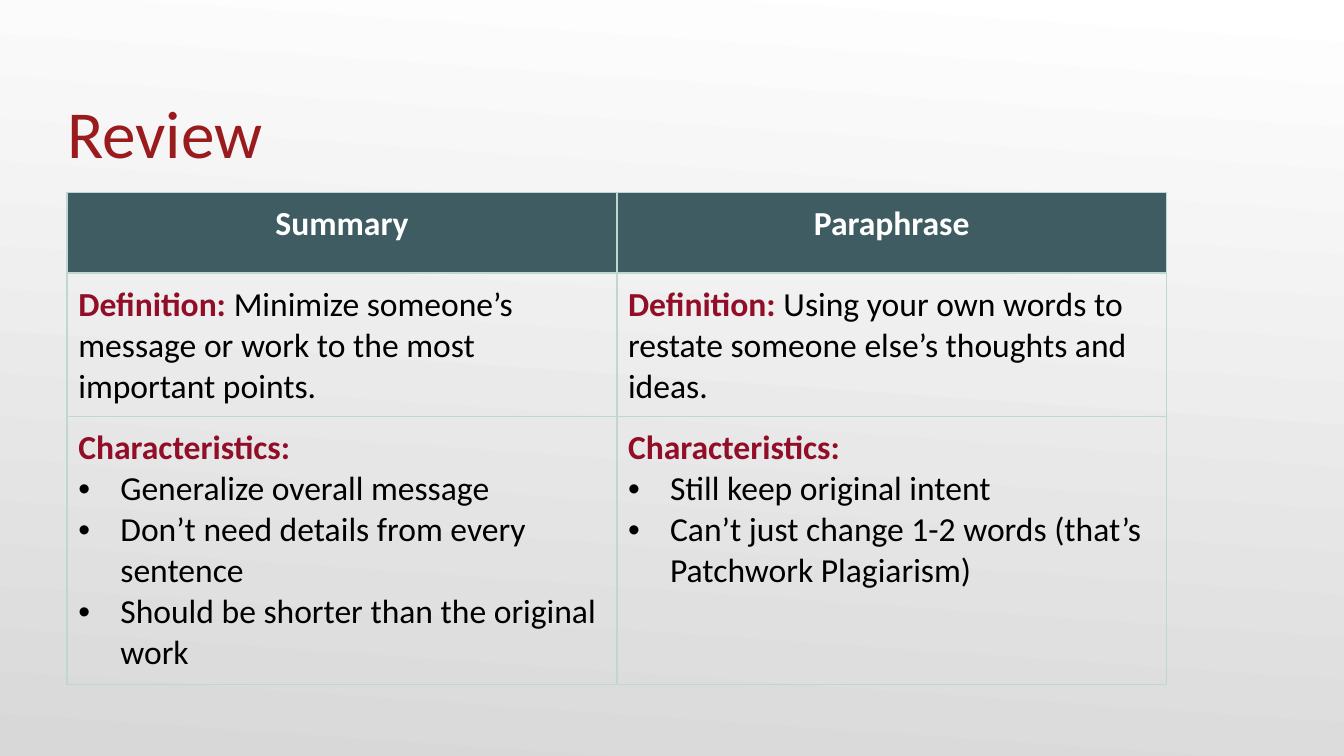
from lxml.etree import SubElement
from pptx import Presentation
from pptx.dml.color import RGBColor
from pptx.enum.text import MSO_ANCHOR, PP_ALIGN
from pptx.oxml import parse_xml
from pptx.oxml.ns import nsdecls, qn
from pptx.util import Pt

COLORS = {
    "top": "FFFFFF",
    "bottom": "D8D8D8",
    "title": "991B1E",
    "header": "3E5C61",
    "header_text": "FFFFFF",
    "label": "910D28",
    "body": "000000",
    "border": "BED7D3",
}
COLUMNS = [
    (
        "Summary",
        "Minimize someone’s message or work to the most important points.",
        [
            "Generalize overall message",
            "Don’t need details from every sentence",
            "Should be shorter than the original work",
        ],
    ),
    (
        "Paraphrase",
        "Using your own words to restate someone else’s thoughts and ideas.",
        [
            "Still keep original intent",
            "Can’t just change 1-2 words (that’s Patchwork Plagiarism)",
        ],
    ),
]


def style_run(run, size, color, bold=False):
    run.font.name = "Calibri"
    run.font.size = Pt(size)
    run.font.bold = bold
    run.font.color.rgb = RGBColor.from_string(COLORS[color])


def add_bullet(paragraph):
    props = paragraph._p.get_or_add_pPr()
    props.set("marL", str(Pt(22.5)))
    props.set("indent", str(-Pt(22.5)))
    bullet_color = SubElement(props, qn("a:buClr"))
    SubElement(bullet_color, qn("a:srgbClr"), val=COLORS["body"])
    SubElement(props, qn("a:buFont"), typeface="Arial")
    SubElement(props, qn("a:buChar"), char="•")


prs = Presentation()
prs.slide_width, prs.slide_height = Pt(720), Pt(405)
slide = prs.slides.add_slide(prs.slide_layouts[6])

backdrop = slide.background.fill
backdrop.gradient()
backdrop.gradient_angle = 266
for stop, shade in zip(backdrop.gradient_stops, ("top", "bottom")):
    stop.color.rgb = RGBColor.from_string(COLORS[shade])

title = slide.shapes.add_textbox(Pt(36), Pt(24.5), Pt(648), Pt(67.5)).text_frame
title.word_wrap = True
title.vertical_anchor = MSO_ANCHOR.BOTTOM
title.margin_left = title.margin_right = title.margin_bottom = 0
title.margin_top = Pt(3.6)
title.text = "Review"
style_run(title.paragraphs[0].runs[0], 36, "title")

comparison = slide.shapes.add_table(3, 2, Pt(36), Pt(103.2), Pt(589), Pt(263.5)).table
comparison.first_row = comparison.horz_banding = False
for column in comparison.columns:
    column.width = Pt(294.5)
for row, height in zip(comparison.rows, (43, 77, 143.5)):
    row.height = Pt(height)

for col, (heading, meaning, traits) in enumerate(COLUMNS):
    header, definition, characteristics = (comparison.cell(r, col) for r in range(3))

    header.text_frame.text = heading
    header.text_frame.paragraphs[0].alignment = PP_ALIGN.CENTER
    style_run(header.text_frame.paragraphs[0].runs[0], 18, "header_text", True)

    sentence = definition.text_frame.paragraphs[0]
    for text, color in (("Definition: ", "label"), (meaning, "body")):
        run = sentence.add_run()
        run.text = text
        style_run(run, 18, color, color == "label")

    characteristics.text_frame.text = "\n".join(["Characteristics:"] + traits)
    label, *points = characteristics.text_frame.paragraphs
    style_run(label.runs[0], 18, "label", True)
    for point in points:
        add_bullet(point)
        style_run(point.runs[0], 18, "body")

for cell in comparison.iter_cells():
    cell.margin_left = cell.margin_right = Pt(6)
    cell.margin_top = cell.margin_bottom = Pt(6)
    cell.fill.background()
    cell_props = cell._tc.get_or_add_tcPr()
    for position, side in enumerate(("lnL", "lnR", "lnT", "lnB")):
        border = parse_xml(
            f'<a:{side} {nsdecls("a")} w="{Pt(1)}"><a:solidFill>'
            f'<a:srgbClr val="{COLORS["border"]}"/></a:solidFill></a:{side}>'
        )
        cell_props.insert(position, border)

for header in comparison.rows[0].cells:
    header.fill.solid()
    header.fill.fore_color.rgb = RGBColor.from_string(COLORS["header"])

prs.save("out.pptx")
